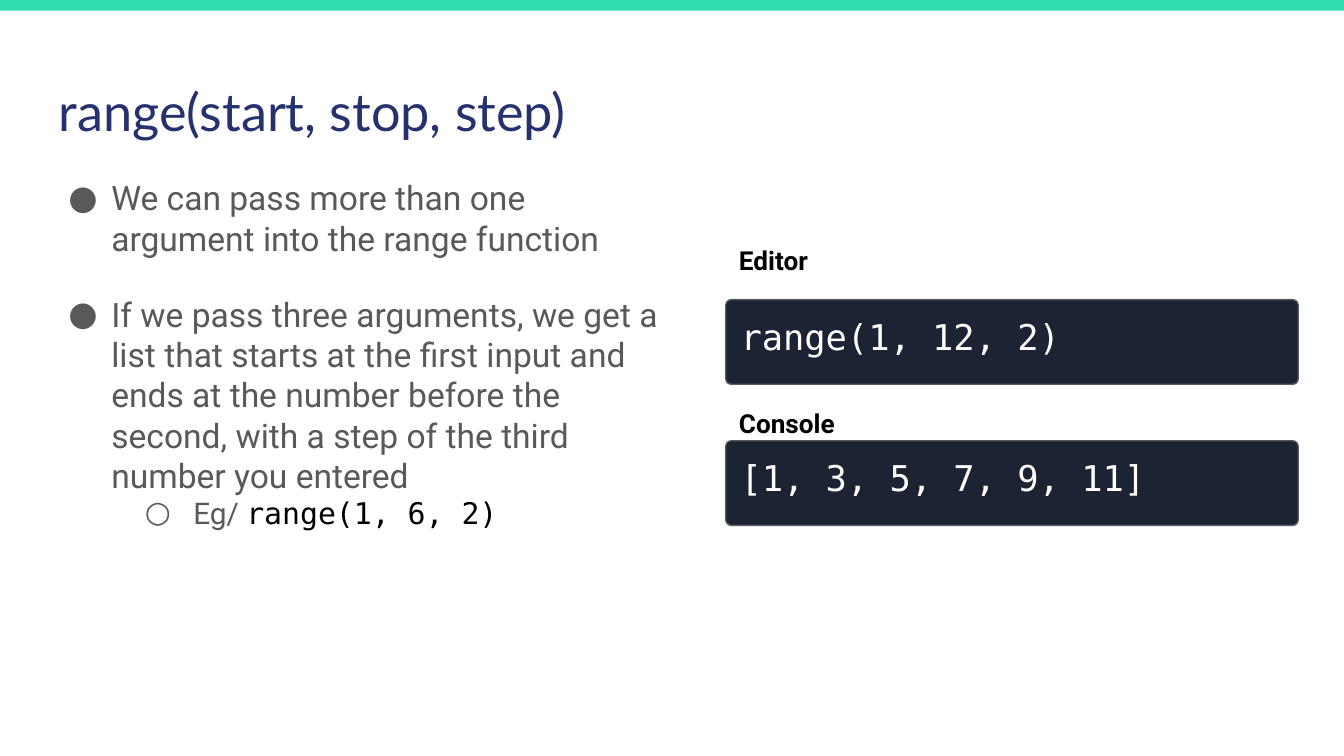
from dataclasses import dataclass

from lxml.etree import SubElement as SubEl
from pptx import Presentation
from pptx.dml.color import RGBColor as Rgb
from pptx.enum.shapes import MSO_SHAPE as Form
from pptx.enum.text import MSO_ANCHOR as Anchor, PP_ALIGN as Align
from pptx.oxml.ns import qn
from pptx.util import Inches, Pt

HUES = {"bar": "30DDAE", "title": "25326F", "body": "595959",
        "code": "1C2333", "white": "FFFFFF", "black": "000000"}
SANS, HEAD, MONO = "Roboto", "Lato", "DejaVu Sans Mono"


@dataclass
class Font:
    name: str
    size: int
    hue: str
    bold: bool = False


@dataclass
class Item:
    runs: list[tuple[str, Font]]
    mark: str
    left: float
    hang: float
    level: int = 0
    after: int = 0


@dataclass
class Panel:
    label: str
    code: str
    label_top: float
    code_top: float


def color(key: str) -> Rgb:
    return Rgb.from_string(HUES[key])


def style(run, font: Font) -> None:
    run.font.name = font.name
    run.font.size = Pt(font.size)
    run.font.bold = font.bold
    run.font.color.rgb = color(font.hue)


def set_up(frame) -> None:
    frame.word_wrap = True
    frame.vertical_anchor = Anchor.TOP
    frame.margin_left = frame.margin_right = Inches(0.1)
    frame.margin_top = frame.margin_bottom = Inches(0.1)


def write(frame, text: str, font: Font) -> None:
    set_up(frame)
    frame.text = text
    para = frame.paragraphs[0]
    para.alignment = Align.LEFT
    style(para.runs[0], font)


def add_box(slide, left: float, top: float, width: float, height: float):
    return slide.shapes.add_textbox(
        Inches(left), Inches(top), Inches(width), Inches(height)).text_frame


def add_form(slide, form, left: float, top: float, width: float,
             height: float, hue: str):
    shape = slide.shapes.add_shape(
        form, Inches(left), Inches(top), Inches(width), Inches(height))
    shape.shadow.inherit = False
    shape.fill.solid()
    shape.fill.fore_color.rgb = color(hue)
    shape.line.fill.background()
    return shape


def add_item(para, item: Item) -> None:
    para.level = item.level
    para.space_after = Pt(item.after)
    for text, font in item.runs:
        run = para.add_run()
        run.text = text
        style(run, font)
    # Bullet with a hanging indent
    props = para._p.get_or_add_pPr()
    props.set("marL", str(Inches(item.left)))
    props.set("indent", str(Inches(-item.hang)))
    tint = SubEl(props, qn("a:buClr"))
    SubEl(tint, qn("a:srgbClr"), val=HUES["body"])
    SubEl(props, qn("a:buFont"), typeface=SANS)
    SubEl(props, qn("a:buChar"), char=item.mark)


def add_panel(slide, panel: Panel) -> None:
    left = 5.4
    shape = add_form(slide, Form.ROUNDED_RECTANGLE, left, panel.code_top,
                     4.26, 0.63, "code")
    shape.adjustments[0] = 0.065
    shape.line.color.rgb = color("body")
    shape.line.width = Pt(0.75)
    write(shape.text_frame, panel.code, Font(MONO, 19, "white"))
    write(add_box(slide, left, panel.label_top, 1.73, 0.44), panel.label,
          Font(SANS, 14, "black", True))


BODY = Font(SANS, 18, "body")
ITEMS = [
    Item([("We can pass more than one argument into the range function", BODY)],
         "●", 0.39, 0.32, after=19),
    Item([("If we pass three arguments, we get a list that starts at the first "
           "input and ends at the number before the second, with a step of the "
           "third number you entered", BODY)], "●", 0.39, 0.32),
    Item([("Eg/ ", Font(SANS, 16, "body")),
          ("range(1, 6, 2)", Font(MONO, 16, "black"))], "○", 1, 0.36, level=1),
]
PANELS = [
    Panel("Editor", "range(1, 12, 2)", 1.72, 2.23),
    Panel("Console", "[1, 3, 5, 7, 9, 11]", 2.93, 3.28),
]


def main() -> None:
    # Page in the ratio 16:9
    deck = Presentation()
    deck.slide_width = Inches(10)
    deck.slide_height = Inches(10) * 9 // 16
    slide = deck.slides.add_slide(deck.slide_layouts[6])

    # Top bar and title
    add_form(slide, Form.RECTANGLE, -0.01, 0, 10.02, 0.08, "bar")
    write(add_box(slide, 0.34, 0.49, 9.32, 0.63), "range(start, stop, step)",
          Font(HEAD, 28, "title"))

    # Bullet list
    frame = add_box(slide, 0.34, 1.22, 4.76, 2.86)
    set_up(frame)
    for i, item in enumerate(ITEMS):
        add_item(frame.add_paragraph() if i else frame.paragraphs[0], item)

    # Code panels
    for panel in PANELS:
        add_panel(slide, panel)

    deck.save("out.pptx")


if __name__ == "__main__":
    main()
